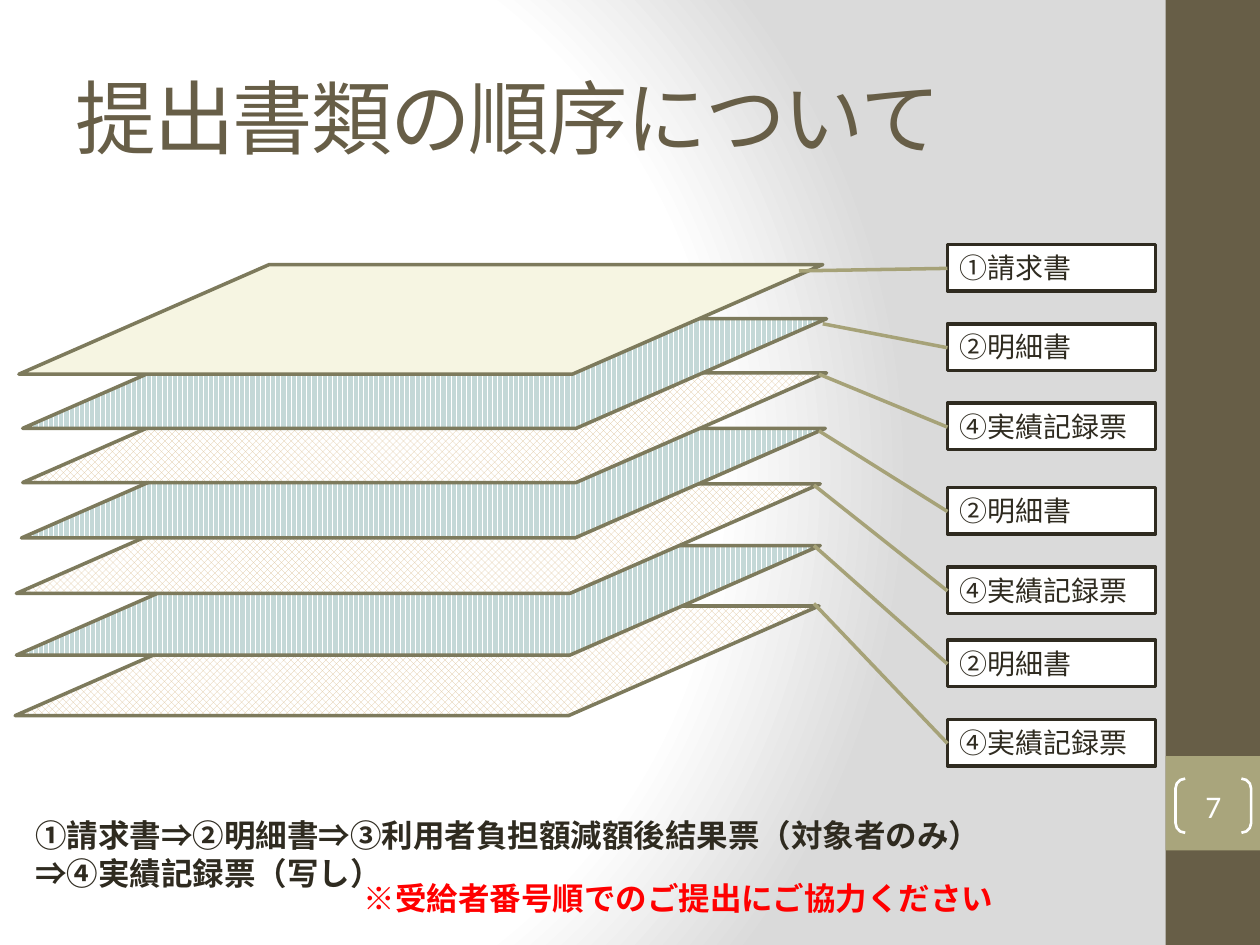
"""Builds the slide on the order of submitted documents."""
from lxml import etree
from pptx import Presentation
from pptx.dml.color import RGBColor
from pptx.enum.dml import MSO_PATTERN
from pptx.enum.shapes import MSO_CONNECTOR, MSO_SHAPE
from pptx.enum.text import MSO_ANCHOR, PP_ALIGN
from pptx.oxml import parse_xml
from pptx.oxml.ns import qn
from pptx.util import Inches, Pt

RECTANGLE, SHEET, BRACKETS = MSO_SHAPE.RECTANGLE, MSO_SHAPE.PARALLELOGRAM, MSO_SHAPE.DOUBLE_BRACKET
STRAIGHT = MSO_CONNECTOR.STRAIGHT
STRIPES, DIAMONDS = MSO_PATTERN.DARK_VERTICAL, MSO_PATTERN.SOLID_DIAMOND
TOP, MIDDLE = MSO_ANCHOR.TOP, MSO_ANCHOR.MIDDLE
LEFT, CENTER = PP_ALIGN.LEFT, PP_ALIGN.CENTER

COLORS = {
    "brown": "675E47", "olive": "A9A57C", "ink": "2F2B20", "white": "FFFFFF",
    "edge": "7D7A5C", "leader": "A6A278", "cream": "F6F5E2", "teal": "C4D8D7",
    "sand": "DEC59E", "red": "FF0000", "gray": "DADADA",
}
RGB = {name: RGBColor.from_string(value) for name, value in COLORS.items()}


def add_box(kind, place, fill=None, line=None, width=2):
    """Add a preset shape without shadow."""
    box = page.shapes.add_shape(kind, *map(Inches, place))
    box.shadow.inherit = False
    if fill:
        box.fill.solid()
        box.fill.fore_color.rgb = RGB[fill]
    else:
        box.fill.background()
    if line:
        box.line.color.rgb = RGB[line]
        box.line.width = Pt(width)
    else:
        box.line.fill.background()
    return box


def write(box, text, color, size, font="Calibri", bold=False, align=LEFT, anchor=TOP):
    """Write one formatted paragraph into a shape."""
    frame = box.text_frame
    frame.word_wrap = True
    frame.vertical_anchor = anchor
    para = frame.paragraphs[0]
    para.alignment = align
    span = para.add_run()
    span.text = text
    for name, value in {"name": font, "size": Pt(size), "bold": bold}.items():
        setattr(span.font, name, value)
    span.font.color.rgb = RGB[color]
    return span


deck = Presentation()
deck.slide_width, deck.slide_height = Inches(10), Inches(7.5)
page = deck.slides.add_slide(deck.slide_layouts[5])

page.background.fill.solid()
solid = page.element.find(".//" + qn("p:bgPr")).find(qn("a:solidFill"))
stops = "".join(
    f'<a:gs pos="{position * 1000}"><a:srgbClr val="{COLORS[color]}"/></a:gs>'
    for position, color in [(0, "white"), (75, "white"), (100, "gray")]
)
solid.getparent().replace(solid, parse_xml(
    '<a:gradFill xmlns:a="http://schemas.openxmlformats.org/drawingml/2006/main" rotWithShape="1">'
    f'<a:gsLst>{stops}</a:gsLst><a:path path="circle">'
    '<a:fillToRect l="20000" t="50000" r="100000" b="50000"/></a:path></a:gradFill>'
))

add_box(RECTANGLE, (9.25, 0, 0.75, 7.5), "brown")
add_box(RECTANGLE, (9.25, 6, 0.75, 0.75), "olive")

title = page.shapes.title
title_place = {"left": 0.5, "top": 0.3, "width": 8.33, "height": 1.25}
for name, value in title_place.items():
    setattr(title, name, Inches(value))
heading = write(title, "提出書類の順序について", "brown", 46, "Cambria", anchor=MIDDLE)
heading.font._element.set("spc", "-100")

sheets = [
    (0.12, 4.81, DIAMONDS), (0.13, 4.33, STRIPES), (0.13, 3.84, DIAMONDS),
    (0.17, 3.4, STRIPES), (0.18, 2.96, DIAMONDS), (0.18, 2.53, STRIPES),
    (0.15, 2.1, None),
]
for left, top, pattern in sheets:
    sheet = add_box(SHEET, (left, top, 6.38, 0.87), "cream", "edge")
    sheet.adjustments[0] = 2.284
    if pattern:
        sheet.fill.patterned()
        sheet.fill.pattern = pattern
        sheet.fill.fore_color.rgb = RGB["teal" if pattern == STRIPES else "sand"]
        sheet.fill.back_color.rgb = RGB["white"]

labels = [
    ("①請求書", 1.94, 6.34, 2.15), ("②明細書", 2.57, 6.53, 2.57),
    ("④実績記録票", 3.2, 6.5, 2.97), ("②明細書", 3.87, 6.5, 3.42),
    ("④実績記録票", 4.5, 6.46, 3.85), ("②明細書", 5.08, 6.46, 4.33),
    ("④実績記録票", 5.71, 6.46, 4.79),
]
for text, top, tip_x, tip_y in labels:
    label = add_box(RECTANGLE, (7.52, top, 1.65, 0.37), "white", "ink")
    write(label, text, "ink", 16)
    leader = page.shapes.add_connector(
        STRAIGHT, *map(Inches, (7.52, top + 0.19, tip_x, tip_y)))
    leader.line.color.rgb = RGB["leader"]
    leader.line.width = Pt(2)
    etree.SubElement(leader._element.spPr, qn("a:effectLst"))

notes = [
    ((0.18, 6.43, 7.89, 0.71), "ink",
     "①請求書⇒②明細書⇒③利用者負担額減額後結果票（対象者のみ）⇒④実績記録票（写し）"),
    ((2.79, 6.93, 5.28, 0.4), "red", "※受給者番号順でのご提出にご協力ください"),
]
for place, color, text in notes:
    note = page.shapes.add_textbox(*map(Inches, place))
    write(note, text, color, 18, bold=True)

number = add_box(BRACKETS, (9.33, 6.18, 0.6, 0.43), line="white", width=1.5)
number.adjustments[0] = 0.179
for side in ("left", "top", "right", "bottom"):
    setattr(number.text_frame, f"margin_{side}", 0)
write(number, "7", "white", 18, align=CENTER, anchor=MIDDLE)

deck.save("out.pptx")
